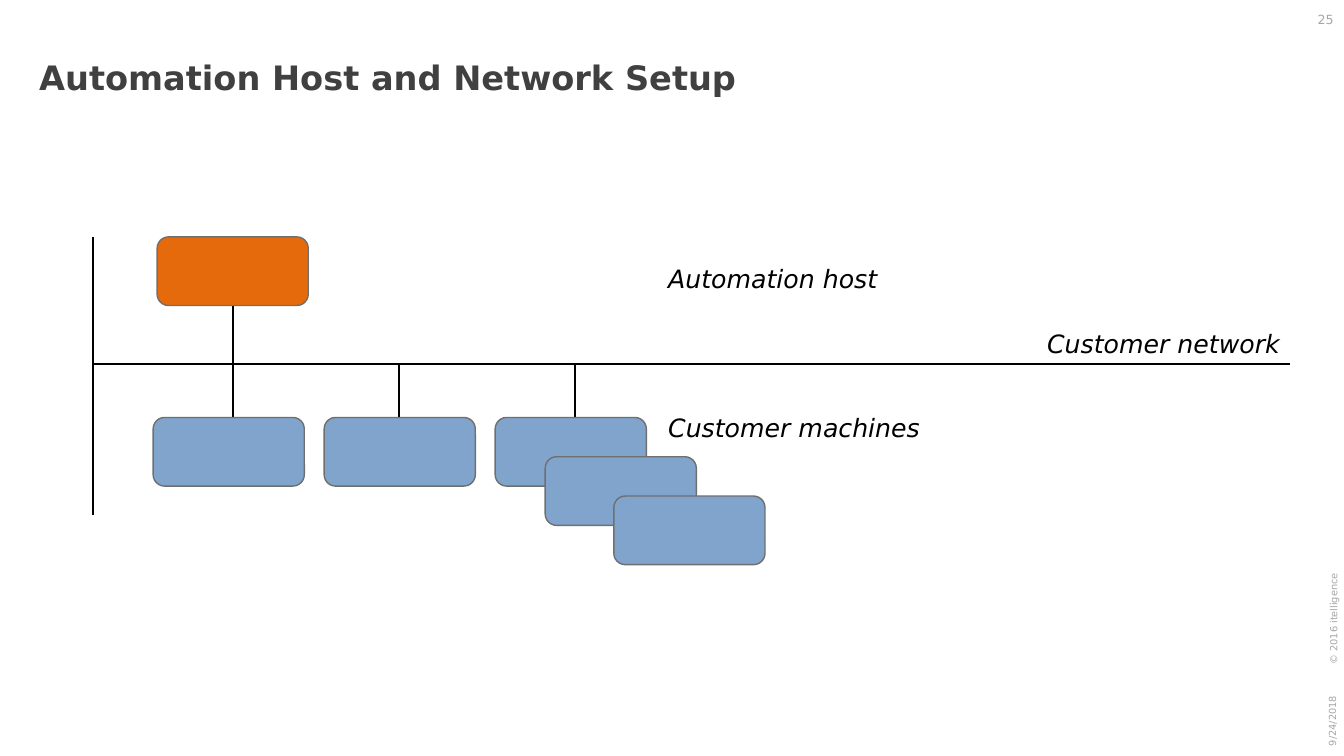
"""Build the automation host and network setup slide."""
from lxml.etree import SubElement
from pptx import Presentation
from pptx.dml.color import RGBColor
from pptx.enum.shapes import MSO_CONNECTOR, MSO_SHAPE
from pptx.enum.text import MSO_ANCHOR, PP_ALIGN
from pptx.oxml.ns import qn
from pptx.util import Cm, Pt

THEME = {
    "font": "DejaVu Sans",
    "host": "E46A0B",
    "machine": "80A4CC",
    "outline": "6F6F6F",
    "network": "000000",
    "outline_width": 1,
    "network_width": 1.5,
    "title": {"size": 24, "bold": True, "color": "404040"},
    "label": {"size": 18, "italic": True, "color": "000000"},
    "footer": {"size": 7, "color": "A6A6A6"},
    "page": {"size": 9, "color": "A6A6A6"},
}

TEXTS = [
    ("Automation Host and Network Setup", "title", (0.74, 0.99, 32.33, 2.01), {"line_spacing": 0.9}, 0),
    ("9/24/2018", "footer", (32.56, 17.78, 2.03, 0.51), {}, 270),
    ("© 2016 itelligence", "footer", (26.62, 9.75, 13.97, 0.51), {}, 270),
    ("25", "page", (32.51, 0, 1.35, 0.99), {"alignment": PP_ALIGN.RIGHT}, 0),
    ("Automation host", "label", (16.59, 6.5, 9.19, 1.02), {}, 0),
    ("Customer machines", "label", (16.59, 10.26, 9.19, 1.02), {}, 0),
    ("Customer network", "label", (26.14, 8.13, 6.96, 1.07), {}, 0),
]

BOX_SIZE = (3.81, 1.73)
HOST = (3.96, 5.97)
MACHINE_LEFT, MACHINE_TOP, MACHINE_STEP, MACHINE_COUNT = 3.86, 10.52, 4.31, 3
STACK_LEFTS, STACK_STEP = (13.74, 15.47), 0.99
NETWORK_LEFT, NETWORK_RIGHT, NETWORK_Y = 2.34, 32.51, 9.17
BACKBONE_TOP, BACKBONE_BOTTOM = 5.97, 12.98
HOST_DROP, MACHINE_DROPS = 5.87, (10.06, 14.48)
DROP_LENGTH = 1.47


def add_text(slide, text, style, bounds, paragraph_format, rotation):
    box = slide.shapes.add_textbox(*map(Cm, bounds))
    box.rotation = rotation
    frame = box.text_frame
    frame.word_wrap = True
    frame.vertical_anchor = MSO_ANCHOR.MIDDLE
    paragraph = frame.paragraphs[0]
    paragraph.text = text
    for name, value in paragraph_format.items():
        setattr(paragraph, name, value)
    font_format = dict(THEME[style], name=THEME["font"])
    font_format["size"] = Pt(font_format["size"])
    paragraph.font.color.rgb = RGBColor.from_string(font_format.pop("color"))
    for name, value in font_format.items():
        setattr(paragraph.font, name, value)


def set_line(line, color, width):
    line.color.rgb = RGBColor.from_string(THEME[color])
    line.width = Pt(THEME[width])


def add_box(slide, position, color):
    shape = slide.shapes.add_shape(MSO_SHAPE.ROUNDED_RECTANGLE, *map(Cm, position + BOX_SIZE))
    shape.shadow.inherit = False
    shape.fill.solid()
    shape.fill.fore_color.rgb = RGBColor.from_string(THEME[color])
    set_line(shape.line, "outline", "outline_width")


def add_wire(slide, *ends):
    connector = slide.shapes.add_connector(MSO_CONNECTOR.STRAIGHT, *map(Cm, ends))
    set_line(connector.line, "network", "network_width")
    SubElement(connector._element.spPr, qn("a:effectLst"))


def main():
    presentation = Presentation()
    presentation.slide_width, presentation.slide_height = Cm(33.87), Cm(19.05)
    slide = presentation.slides.add_slide(presentation.slide_layouts[6])

    add_box(slide, HOST, "host")
    add_wire(slide, NETWORK_LEFT, BACKBONE_TOP, NETWORK_LEFT, BACKBONE_BOTTOM)
    add_wire(slide, NETWORK_LEFT, NETWORK_Y, NETWORK_RIGHT, NETWORK_Y)
    add_wire(slide, HOST_DROP, NETWORK_Y - DROP_LENGTH, HOST_DROP, NETWORK_Y)
    add_wire(slide, HOST_DROP, MACHINE_TOP - DROP_LENGTH, HOST_DROP, MACHINE_TOP)
    for left in MACHINE_DROPS:
        add_wire(slide, left, NETWORK_Y, left, NETWORK_Y + DROP_LENGTH)

    for column in range(MACHINE_COUNT):
        add_box(slide, (MACHINE_LEFT + column * MACHINE_STEP, MACHINE_TOP), "machine")
    for level, left in enumerate(STACK_LEFTS, start=1):
        add_box(slide, (left, MACHINE_TOP + level * STACK_STEP), "machine")

    for text in TEXTS:
        add_text(slide, *text)
    presentation.save("out.pptx")


if __name__ == "__main__":
    main()
